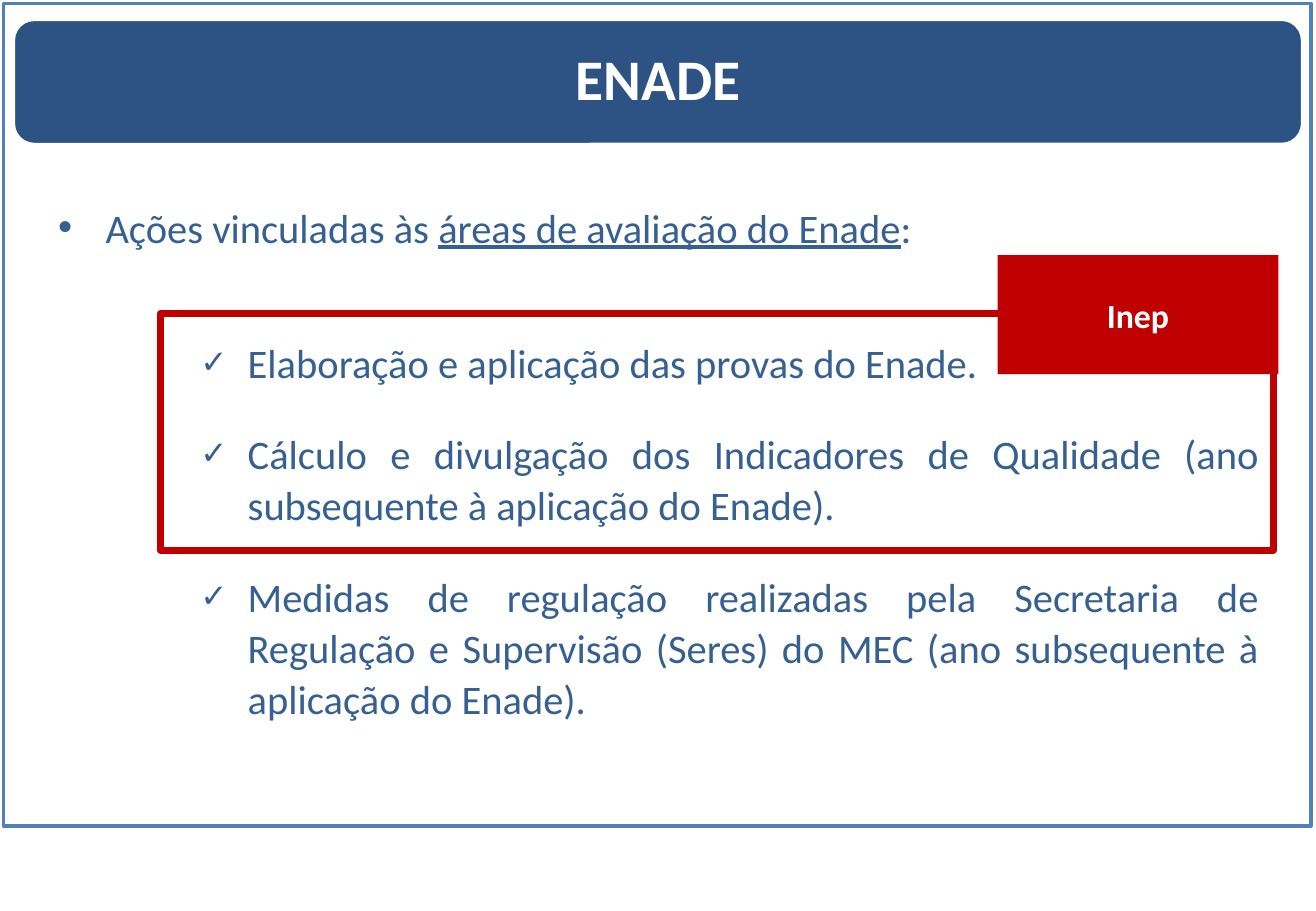
from lxml.etree import SubElement
from pptx import Presentation
from pptx.dml.color import RGBColor
from pptx.enum.shapes import MSO_SHAPE
from pptx.enum.text import MSO_ANCHOR, PP_ALIGN
from pptx.oxml.ns import qn
from pptx.util import Inches, Pt

W, H = 10.83, 7.5
INDENT = 0.39
COLORS = {"white": "FFFFFF", "border": "4F81BD", "banner": "1F497D",
          "text": "376092", "red": "C00000"}

prs = Presentation()
prs.slide_width, prs.slide_height = Inches(W), Inches(H)
s = prs.slides.add_slide(prs.slide_layouts[6])


def add_box(kind, left, top, width, height, fill=None, alpha=100, line=None, weight=2):
    sp = s.shapes.add_shape(kind, Inches(left), Inches(top), Inches(width), Inches(height))
    sp.shadow.inherit = False
    if fill:
        sp.fill.solid()
        sp.fill.fore_color.rgb = RGBColor.from_string(COLORS[fill])
        if alpha < 100:
            clr = sp._element.spPr.find(qn("a:solidFill"))[0]
            SubElement(clr, qn("a:alpha"), val=str(alpha * 1000))
    else:
        sp.fill.background()
    if line:
        sp.line.color.rgb = RGBColor.from_string(COLORS[line])
        sp.line.width = Pt(weight)
    else:
        sp.line.fill.background()
    sp.text_frame.vertical_anchor = MSO_ANCHOR.MIDDLE
    return sp


def add_run(p, text, size, color, bold=False, underline=False):
    r = p.add_run()
    r.text = text
    r.font.name, r.font.size = "Calibri", Pt(size)
    r.font.bold, r.font.underline = bold, underline
    r.font.color.rgb = RGBColor.from_string(COLORS[color])


# Page border and title banner
add_box(MSO_SHAPE.RECTANGLE, 0.03, 0.03, W - 0.07, 6.77, "white", 90, "border")
banner = add_box(MSO_SHAPE.ROUNDED_RECTANGLE, 0.11, 0.16, W - 0.22, 1.03,
                 "banner", 94, "white")
p = banner.text_frame.paragraphs[0]
p.alignment, p.line_spacing = PP_ALIGN.CENTER, 0.9
add_run(p, "ENADE", 34, "white", bold=True)

# Body: (bullet, bullet size %, left margin, space before, runs with underline flag)
body = [
    ("•", 100, INDENT, 0, [("Ações vinculadas às ", False),
                           ("áreas de avaliação do Enade", True), (":", False)]),
    ("✓", 80, 4 * INDENT, 50, [("Elaboração e aplicação das provas do Enade.", False)]),
    ("✓", 80, 4 * INDENT, 24, [("Cálculo e divulgação dos Indicadores de Qualidade "
                                "(ano subsequente à aplicação do Enade).", False)]),
    ("✓", 80, 4 * INDENT, 24, [("Medidas de regulação realizadas pela Secretaria de "
                                "Regulação e Supervisão (Seres) do MEC (ano subsequente "
                                "à aplicação do Enade).", False)]),
]
tf = s.shapes.add_textbox(Inches(0.38), Inches(1.6), Inches(10.08), Inches(4.63)).text_frame
tf.word_wrap = True
for i, (bullet, percent, margin, before, runs) in enumerate(body):
    p = tf.add_paragraph() if i else tf.paragraphs[0]
    pPr = p._p.get_or_add_pPr()
    pPr.set("marL", str(Inches(margin)))
    pPr.set("indent", str(-Inches(INDENT)))
    SubElement(pPr, qn("a:buSzPct"), val=str(percent * 1000))
    SubElement(pPr, qn("a:buFont"), typeface="Arial")
    SubElement(pPr, qn("a:buChar"), char=bullet)
    p.alignment, p.line_spacing = PP_ALIGN.JUSTIFY, 1.05
    if before:
        p.space_before = Pt(before)
    for text, underline in runs:
        add_run(p, text, 24, "text", underline=underline)

# Red frame and its label
add_box(MSO_SHAPE.RECTANGLE, 1.32, 2.58, 9.16, 1.95, line="red", weight=4)
label = add_box(MSO_SHAPE.RECTANGLE, 8.21, 2.1, 2.31, 0.98, "red")
p = label.text_frame.paragraphs[0]
p.alignment = PP_ALIGN.CENTER
add_run(p, "Inep", 20, "white", bold=True)

prs.save("out.pptx")
